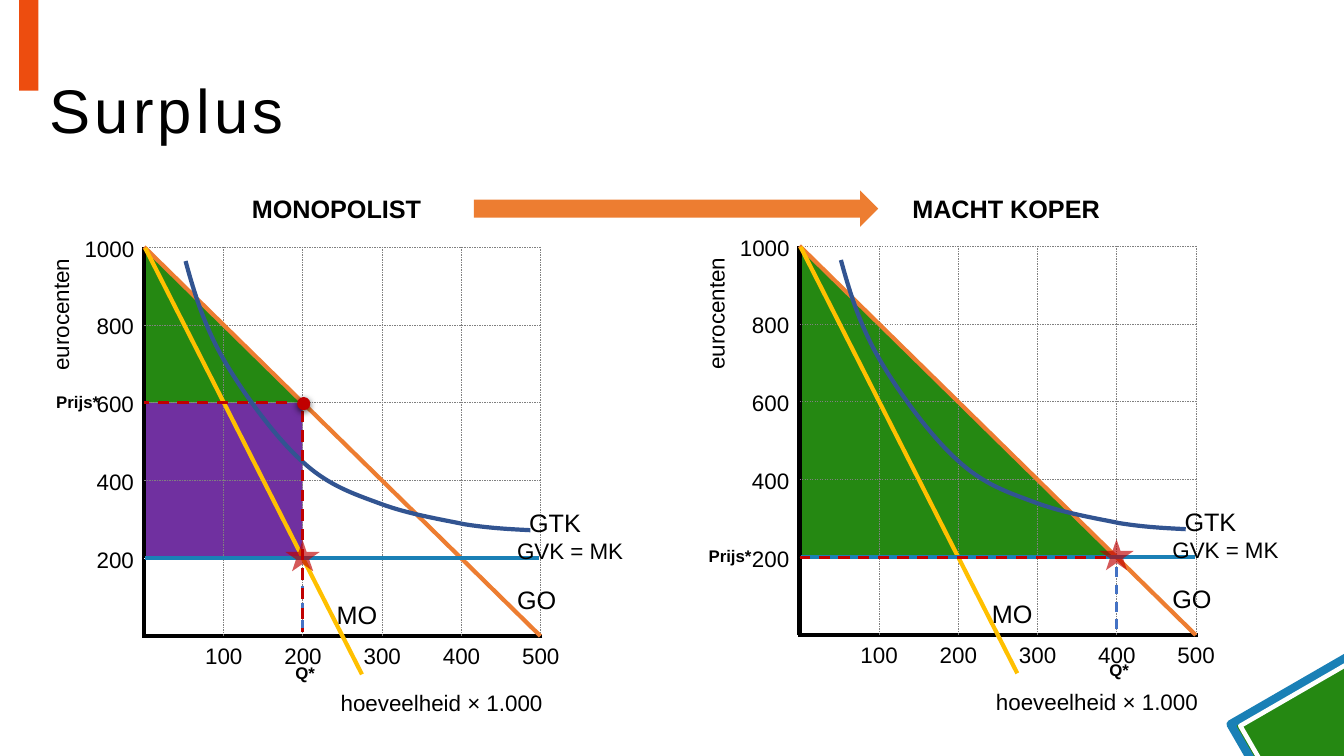
from dataclasses import dataclass

from lxml import etree
from pptx import Presentation
from pptx.dml.color import RGBColor
from pptx.enum.dml import MSO_LINE, MSO_PATTERN
from pptx.enum.shapes import MSO_CONNECTOR, MSO_SHAPE
from pptx.enum.text import MSO_ANCHOR, MSO_AUTO_SIZE, PP_ALIGN
from pptx.oxml.ns import qn
from pptx.util import Inches, Pt

DASH = MSO_LINE.DASH
STRIPES = MSO_PATTERN.DARK_VERTICAL
STRAIGHT = MSO_CONNECTOR.STRAIGHT
RECT = MSO_SHAPE.RECTANGLE
OVAL = MSO_SHAPE.OVAL
STAR = MSO_SHAPE.STAR_5_POINT
RIGHT_ARROW = MSO_SHAPE.RIGHT_ARROW
MIDDLE = MSO_ANCHOR.MIDDLE
FIT_SHAPE = MSO_AUTO_SIZE.SHAPE_TO_FIT_TEXT
LEFT = PP_ALIGN.LEFT


@dataclass(frozen=True)
class Theme:
    font: str = "Arial"
    ink: str = "000000"
    paper: str = "FFFFFF"
    accent: str = "ED4D0F"
    grid: str = "808080"
    demand: str = "ED7D31"
    marginal_revenue: str = "FFC000"
    marginal_cost: str = "1A80B6"
    average_cost: str = "325491"
    drop: str = "4472C4"
    optimum: str = "C00000"
    consumer: str = "258812"
    producer: str = "7030A0"
    title: int = 44
    heading: int = 18
    axis: int = 16
    note: int = 12


THEME = Theme()

AVERAGE_COST_CURVE = [
    (0.41, 0.14),
    (0.5, 0.47), (0.6, 0.79), (0.79, 1.12),
    (0.98, 1.45), (1.31, 1.9), (1.57, 2.13),
    (1.83, 2.37), (2.08, 2.45), (2.35, 2.55),
    (2.62, 2.65), (2.93, 2.7), (3.17, 2.75),
    (3.42, 2.79), (3.63, 2.8), (3.83, 2.81),
]


@dataclass(frozen=True)
class Plot:
    left: float
    top: float

    def x(self, quantity):
        return self.left + quantity * 3.93 / 500

    def y(self, price):
        return self.top + (1000 - price) * 3.86 / 1000


def rgb(colour):
    return RGBColor.from_string(colour)


def add_line(slide, start, end, colour, width, dash=None):
    line = slide.shapes.add_connector(STRAIGHT, *map(Inches, (*start, *end)))
    line.line.color.rgb = rgb(colour)
    line.line.width = Pt(width)
    if dash:
        line.line.dash_style = dash
    etree.SubElement(line._element.spPr, qn("a:effectLst"))


def add_label(slide, text, box, size, bold=False, rotation=0):
    label = slide.shapes.add_textbox(*map(Inches, box))
    label.rotation = rotation
    frame = label.text_frame
    frame.word_wrap = False
    frame.auto_size = FIT_SHAPE
    paragraph = frame.paragraphs[0]
    paragraph.text = text
    font = paragraph.font
    font.name, font.size, font.bold = THEME.font, Pt(size), bold
    font.color.rgb = rgb(THEME.ink)


def add_figure(slide, preset, box, fill=None, line=None, width=0, rotation=0):
    figure = slide.shapes.add_shape(preset, *map(Inches, box))
    figure.shadow.inherit = False
    figure.rotation = rotation
    if fill:
        figure.fill.solid()
        figure.fill.fore_color.rgb = rgb(fill)
    else:
        figure.fill.background()
    if line:
        figure.line.color.rgb = rgb(line)
        figure.line.width = Pt(width)
    else:
        figure.line.fill.background()
    return figure


def add_outline(slide, points, closed):
    start, *rest = [(Inches(x), Inches(y)) for x, y in points]
    builder = slide.shapes.build_freeform(*start)
    builder.add_line_segments(rest, close=closed)
    outline = builder.convert_to_shape()
    outline.shadow.inherit = False
    return outline


def add_area(slide, plot, corners, colour):
    area = add_outline(slide, [(plot.x(q), plot.y(p)) for q, p in corners], True)
    area.fill.patterned()
    area.fill.pattern = STRIPES
    area.fill.fore_color.rgb = rgb(colour)
    area.fill.back_color.rgb = rgb(THEME.paper)
    area.line.fill.background()


def add_curve(slide, points, colour):
    curve = add_outline(slide, points, False)
    curve.fill.background()
    curve.line.color.rgb = rgb(colour)
    curve.line.width = Pt(3)
    segments = list(curve._element.iter(qn("a:lnTo")))
    for first in range(0, len(segments), 3):
        bezier = etree.SubElement(segments[first].getparent(), qn("a:cubicBezTo"))
        for segment in segments[first:first + 3]:
            bezier.append(segment[0])
            segment.getparent().remove(segment)


def add_star(slide, x, y):
    star = add_figure(slide, STAR, (x - 0.17, y - 0.18, 0.34, 0.31), THEME.optimum)
    colour = next(star._element.spPr.iter(qn("a:srgbClr")))
    etree.SubElement(colour, qn("a:alpha"), val="65000")


def add_price_point(slide, x, y):
    point = add_figure(slide, OVAL, (x - 0.05, y - 0.05, 0.12, 0.12),
                       THEME.optimum, THEME.optimum, 0.75)
    effects = point._element.spPr.find(qn("a:effectLst"))
    shadow = etree.SubElement(effects, qn("a:outerShdw"), blurRad=str(Pt(4.5)),
                              dist=str(Pt(1.5)), dir="5400000")
    colour = etree.SubElement(shadow, qn("a:srgbClr"), val=THEME.ink)
    etree.SubElement(colour, qn("a:alpha"), val="63000")


def add_axes(slide, plot):
    left, top, right, bottom = plot.left, plot.top, plot.x(500), plot.y(0)
    add_line(slide, (left, top), (left, bottom), THEME.ink, 3)
    add_line(slide, (right + 0.02, bottom), (left - 0.02, bottom), THEME.ink, 3)
    for price in range(200, 1001, 200):
        y = plot.y(price)
        colour = THEME.paper if price == 200 else THEME.grid
        add_line(slide, (left, y), (right, y), colour, 0.25, DASH)
        width = 0.7 if price == 1000 else 0.58
        add_label(slide, str(price), (left + 0.01 - width, y - 0.17, width, 0.37), THEME.axis)
    for quantity in range(100, 501, 100):
        x = plot.x(quantity)
        add_line(slide, (x, top), (x, bottom), THEME.grid, 0.25, DASH)
        add_label(slide, str(quantity), (x - 0.28, bottom + 0.01, 0.58, 0.37), THEME.axis)
    add_label(slide, "hoeveelheid × 1.000", (left + 1.85, top + 4.34, 2.23, 0.37), THEME.axis)
    add_label(slide, "eurocenten", (left - 1.49, top + 0.48, 1.32, 0.37), THEME.axis, rotation=270)


def add_curves(slide, plot):
    left, top = plot.left, plot.top
    add_line(slide, (left, top), (plot.x(500), plot.y(0)), THEME.demand, 3)
    add_line(slide, (left + 0.01, top + 0.01), (left + 2.16, top + 4.24), THEME.marginal_revenue, 3)
    add_line(slide, (left + 0.01, plot.y(200)), (left + 3.92, plot.y(200)), THEME.marginal_cost, 3)
    add_curve(slide, [(left + x, top + y) for x, y in AVERAGE_COST_CURVE], THEME.average_cost)
    for text, x, y, width, height, size in (
        ("MO", 1.81, 3.45, 0.61, 0.4, THEME.heading),
        ("GO", 3.6, 3.3, 0.59, 0.4, THEME.heading),
        ("GVK = MK", 3.6, 2.83, 1.29, 0.37, THEME.axis),
        ("GTK", 3.72, 2.53, 0.72, 0.4, THEME.heading),
    ):
        add_label(slide, text, (left + x, top + y, width, height), size)


def add_optimum(slide, plot, quantity, price, price_line_end, label_left, label_top):
    x, y = plot.x(quantity), plot.y(price)
    add_line(slide, (x, plot.y(200) + 0.1), (x, plot.y(0) + 0.01), THEME.drop, 1.75, DASH)
    add_star(slide, x, plot.y(200))
    add_label(slide, "Q*", (x - 0.17, label_top, 0.4, 0.3), THEME.note, True)
    add_line(slide, (price_line_end, y), (plot.left, y), THEME.optimum, 2, DASH)
    add_label(slide, "Prijs*", (label_left, y - 0.16, 0.63, 0.3), THEME.note, True)


def add_title(slide, text):
    title = slide.shapes.title
    title.left, title.top, title.width, title.height = map(Inches, (0.39, 0.4, 12.58, 1.45))
    title.text_frame.vertical_anchor = MIDDLE
    paragraph = title.text_frame.paragraphs[0]
    paragraph.text = text
    paragraph.alignment, paragraph.line_spacing = LEFT, 0.9
    font = paragraph.font
    font.name, font.size = THEME.font, Pt(THEME.title)
    font.color.rgb = rgb(THEME.ink)
    paragraph.runs[0].font._element.set("spc", "300")


def main():
    deck = Presentation()
    deck.slide_width, deck.slide_height = Inches(13.33), Inches(7.5)
    slide = deck.slides.add_slide(deck.slide_layouts[5])
    add_figure(slide, RECT, (0.19, 0, 0.19, 0.9), THEME.accent)
    add_figure(slide, RECT, (12.48, 6.71, 1.5, 1.5), THEME.consumer, THEME.marginal_cost, 6, 60)
    add_figure(slide, RECT, (12.55, 6.77, 1.36, 1.36), None, THEME.paper, 3.25, 60)
    add_title(slide, "Surplus")

    monopoly, buyer = Plot(1.43, 2.45), Plot(7.93, 2.44)
    add_area(slide, buyer, [(0, 1000), (0, 200), (400, 200)], THEME.consumer)
    add_area(slide, monopoly, [(0, 600), (200, 600), (200, 200), (0, 200)], THEME.producer)
    add_area(slide, monopoly, [(0, 1000), (0, 600), (200, 600)], THEME.consumer)
    for plot in (buyer, monopoly):
        add_axes(slide, plot)
        add_curves(slide, plot)
    add_optimum(slide, buyer, 400, 200, 10.97, 6.93, 6.5)
    add_optimum(slide, monopoly, 200, 600, 2.85, 0.46, 6.53)
    x, y = monopoly.x(200), monopoly.y(600)
    add_line(slide, (x, y + 0.08), (x, 6.27), THEME.optimum, 2, DASH)
    add_price_point(slide, x, y)

    add_label(slide, "MONOPOLIST", (2.4, 1.87, 1.9, 0.4), THEME.heading, True)
    add_label(slide, "MACHT KOPER", (8.95, 1.87, 2.08, 0.4), THEME.heading, True)
    add_figure(slide, RIGHT_ARROW, (4.7, 1.89, 4.01, 0.36), THEME.demand)
    deck.save("out.pptx")


if __name__ == "__main__":
    main()
